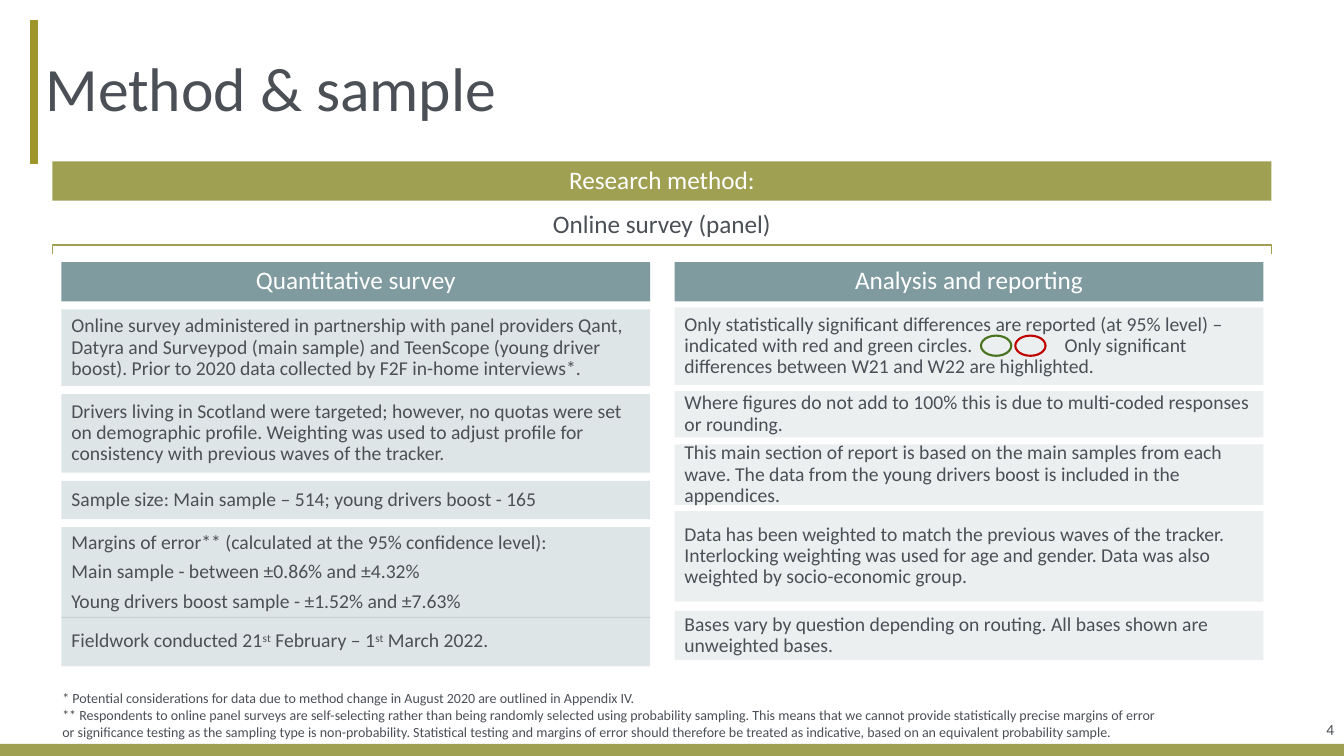
from lxml import etree
from pptx import Presentation
from pptx import util as u
from pptx.dml.color import RGBColor
from pptx.enum import shapes, text
from pptx.oxml.ns import qn

COLORS = {
    "olive": "9FA052", "accent": "9F962B", "teal": "7F9B9F", "mist": "B2C3C5",
    "ink": "4B4F56", "white": "FFFFFF", "green": "49721E", "red": "C00000",
}
FONT = "Calibri"
COLUMN_WIDTH = 5.84
LEFT, RIGHT = 0.61, 6.69
BAND_LEFT, BAND_WIDTH, BAND_HEIGHT = 0.52, 12.09, 0.39
TAB_AFTER_CIRCLES = 3.77

presentation = Presentation()
presentation.slide_width = u.Inches(13.33)
presentation.slide_height = u.Inches(7.5)
slide = presentation.slides.add_slide(presentation.slide_layouts[5])


def add_panel(left, top, width, height, fill=None, opacity=None,
              kind=shapes.MSO_SHAPE.RECTANGLE):
    """Add a borderless shape, optionally filled and see-through."""
    shape = slide.shapes.add_shape(kind, *map(u.Inches, (left, top, width, height)))
    shape.shadow.inherit = False
    shape.line.fill.background()
    if fill is None:
        shape.fill.background()
        return shape
    shape.fill.solid()
    shape.fill.fore_color.rgb = RGBColor.from_string(COLORS[fill])
    if opacity:
        color = shape.fill._xPr.find(".//" + qn("a:srgbClr"))
        etree.SubElement(color, qn("a:alpha")).set("val", str(opacity * 1000))
    return shape


def write(shape, lines, size, color="ink", align=text.PP_ALIGN.LEFT, spacing=0.9,
          gap=0, insets=(0.1, 0.05, 0.1, 0.05), anchor=text.MSO_ANCHOR.MIDDLE):
    """Fill a shape with paragraphs; ^ marks switch superscript on and off."""
    frame = shape.text_frame
    frame.word_wrap = True
    frame.auto_size = text.MSO_AUTO_SIZE.NONE
    frame.vertical_anchor = anchor
    (frame.margin_left, frame.margin_top,
     frame.margin_right, frame.margin_bottom) = map(u.Inches, insets)
    for index, line in enumerate(lines):
        paragraph = frame.add_paragraph() if index else frame.paragraphs[0]
        paragraph.alignment = align
        paragraph.line_spacing = spacing
        paragraph.space_before = u.Pt(gap if index else 0)
        if "\t" in line:
            tabs = etree.SubElement(paragraph._p.get_or_add_pPr(), qn("a:tabLst"))
            etree.SubElement(tabs, qn("a:tab"), pos=str(u.Inches(TAB_AFTER_CIRCLES)), algn="l")
        for part, words in enumerate(line.split("^")):
            run = paragraph.add_run()
            run.text = words
            if part % 2:
                run._r.get_or_add_rPr().set("baseline", "30000")
        paragraph.font.name = FONT
        paragraph.font.size = u.Pt(size)
        paragraph.font.color.rgb = RGBColor.from_string(COLORS[color])


# Page frame and title
add_panel(0, 7.38, 13.33, 0.12, "olive")
title_bar = slide.shapes.add_connector(
    shapes.MSO_CONNECTOR.STRAIGHT, *map(u.Inches, (0.34, 0.2, 0.34, 1.63)))
title_bar.line.color.rgb = RGBColor.from_string(COLORS["accent"])
title_bar.line.width = u.Pt(6)
etree.SubElement(title_bar._element.spPr, qn("a:effectLst"))

title = slide.shapes.title
title.left, title.top, title.width, title.height = map(u.Inches, (0.37, 0.2, 4.76, 1.41))
write(title, ["Method & sample"], 44, insets=(0.08, 0, 0, 0))

# Headings
HEADINGS = [
    ("Research method:", BAND_LEFT, 1.6, BAND_WIDTH, "olive", "white"),
    ("Online survey (panel)", BAND_LEFT, 2.04, BAND_WIDTH, None, "ink"),
    ("Quantitative survey", LEFT, 2.6, COLUMN_WIDTH, "teal", "white"),
    ("Analysis and reporting", RIGHT, 2.6, COLUMN_WIDTH, "teal", "white"),
]
for heading, left, top, width, fill, color in HEADINGS:
    band = add_panel(left, top, width, BAND_HEIGHT, fill)
    write(band, [heading], 18, color, text.PP_ALIGN.CENTER)

# Bracket over both columns
band_right = BAND_LEFT + BAND_WIDTH
corners = [(u.Inches(x), u.Inches(y)) for x, y in
           [(BAND_LEFT, 2.52), (BAND_LEFT, 2.43), (band_right, 2.43), (band_right, 2.52)]]
builder = slide.shapes.build_freeform(*corners[0])
builder.add_line_segments(corners[1:], close=False)
bracket = builder.convert_to_shape()
bracket.shadow.inherit = False
bracket.fill.background()
bracket.line.color.rgb = RGBColor.from_string(COLORS["olive"])
bracket.line.width = u.Pt(1)

# Columns of notes: top, height, paragraphs
SURVEY = [
    (3.07, 0.76, ["Online survey administered in partnership with panel providers Qant, "
                  "Datyra and Surveypod (main sample) and TeenScope (young driver boost). "
                  "Prior to 2020 data collected by F2F in-home interviews*."]),
    (3.91, 0.78, ["Drivers living in Scotland were targeted; however, no quotas were set on "
                  "demographic profile. Weighting was used to adjust profile for consistency "
                  "with previous waves of the tracker."]),
    (4.77, 0.38, ["Sample size: Main sample – 514; young drivers boost - 165"]),
    (5.23, 0.9, ["Margins of error** (calculated at the 95% confidence level):",
                 "Main sample - between ±0.86% and ±4.32%",
                 "Young drivers boost sample - ±1.52% and ±7.63%"]),
    (6.12, 0.49, ["Fieldwork conducted 21^st^ February – 1^st^ March 2022."]),
]
REPORTING = [
    (3.05, 0.77, ["Only statistically significant differences are reported (at 95% level) – "
                  "indicated with red and green circles.\tOnly significant differences "
                  "between W21 and W22 are highlighted."]),
    (3.88, 0.46, ["Where figures do not add to 100% this is due to multi-coded responses "
                  "or rounding."]),
    (4.41, 0.6, ["This main section of report is based on the main samples from each wave. "
                 "The data from the young drivers boost is included in the appendices."]),
    (5.07, 0.9, ["Data has been weighted to match the previous waves of the tracker. "
                 "Interlocking weighting was used for age and gender. Data was also "
                 "weighted by socio-economic group."]),
    (6.06, 0.49, ["Bases vary by question depending on routing. All bases shown are "
                  "unweighted bases."]),
]
for left, fill, notes in [(LEFT, "teal", SURVEY), (RIGHT, "mist", REPORTING)]:
    for top, height, lines in notes:
        panel = add_panel(left, top, COLUMN_WIDTH, height, fill, opacity=25)
        write(panel, lines, 14, gap=6, insets=(0.1, 0.14, 0.1, 0.14))

for left, color in [(9.73, "green"), (10.07, "red")]:
    circle = add_panel(left, 3.33, 0.3, 0.2, kind=shapes.MSO_SHAPE.OVAL)
    circle.line.color.rgb = RGBColor.from_string(COLORS[color])
    circle.line.width = u.Pt(1.5)

# Footnotes and page number
footnotes = slide.shapes.add_textbox(*map(u.Inches, (BAND_LEFT, 6.79, 11.04, 0.61)))
write(footnotes, [
    "* Potential considerations for data due to method change in August 2020 are outlined "
    "in Appendix IV.",
    "** Respondents to online panel surveys are self-selecting rather than being randomly "
    "selected using probability sampling. This means that we cannot provide statistically "
    "precise margins of error or significance testing as the sampling type is "
    "non-probability. Statistical testing and margins of error should therefore be treated "
    "as indicative, based on an equivalent probability sample.",
], 10, spacing=1.0, anchor=text.MSO_ANCHOR.TOP)

page_number = slide.shapes.add_textbox(*map(u.Inches, (12.42, 6.95, 0.91, 0.58)))
write(page_number, ["4"], 11, align=text.PP_ALIGN.RIGHT, spacing=1.0)

presentation.save("out.pptx")
